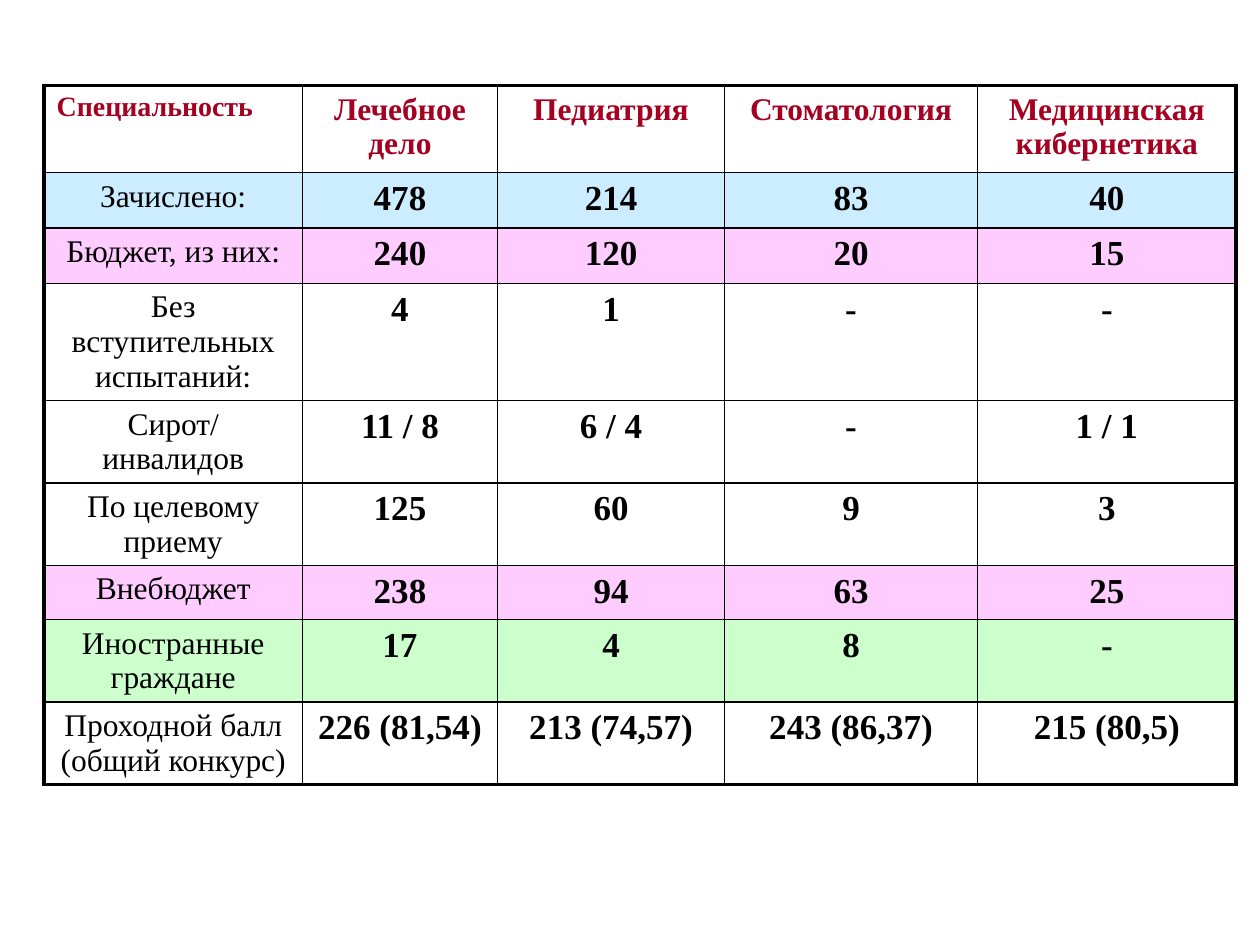
from lxml import etree
from pptx import Presentation
from pptx.dml.color import RGBColor
from pptx.enum.text import PP_ALIGN
from pptx.oxml.ns import qn
from pptx.util import Inches, Pt

LEFT, CENTER = PP_ALIGN.LEFT, PP_ALIGN.CENTER
BLACK = RGBColor(0x00, 0x00, 0x00)
CRIMSON = RGBColor(0xA5, 0x00, 0x21)
WHITE = RGBColor(0xFF, 0xFF, 0xFF)
BLUE = RGBColor(0xCC, 0xEC, 0xFF)
PINK = RGBColor(0xFF, 0xCC, 0xFF)
GREEN = RGBColor(0xCC, 0xFF, 0xCC)
FONT = "Times New Roman"
OUTER, INNER = 2.25, 1

COLUMN_WIDTHS = [2.05, 1.55, 1.8, 2.01, 2.05]
ROWS = [
    (0.69, None, ["Специальность", "Лечебное дело", "Педиатрия", "Стоматология", "Медицинская кибернетика"]),
    (0.44, BLUE, ["Зачислено:", "478", "214", "83", "40"]),
    (0.44, PINK, ["Бюджет, из них:", "240", "120", "20", "15"]),
    (0.44, None, ["Без вступительных испытаний:", "4", "1", "-", "-"]),
    (0.44, None, ["Сирот/ инвалидов", "11 / 8", "6 / 4", "-", "1 / 1"]),
    (0.44, None, ["По целевому приему", "125", "60", "9", "3"]),
    (0.43, PINK, ["Внебюджет", "238", "94", "63", "25"]),
    (0.43, GREEN, ["Иностранные граждане", "17", "4", "8", "-"]),
    (0.44, WHITE, ["Проходной балл (общий конкурс)", "226 (81,54)", "213 (74,57)", "243 (86,37)", "215 (80,5)"]),
]


def write_text(cell, text, size=18, bold=False, color=BLACK, align=CENTER):
    paragraph = cell.text_frame.paragraphs[0]
    paragraph.alignment = align
    run = paragraph.add_run()
    run.text = text
    run.font.name = FONT
    run.font.size = Pt(size)
    run.font.bold = bold
    run.font.color.rgb = color


def set_borders(cell, **widths):
    properties = cell._tc.get_or_add_tcPr()
    for side, width in widths.items():
        line = etree.SubElement(properties, qn(f"a:ln{side}"), w=str(Pt(width)))
        fill = etree.SubElement(line, qn("a:solidFill"))
        etree.SubElement(fill, qn("a:srgbClr"), val=str(BLACK))


def text_format(row, column):
    if row == 0:
        return dict(size=18 if column else 16, bold=True, color=CRIMSON,
                    align=CENTER if column else LEFT)
    return dict(size=20, bold=True) if column else {}


def build_table(slide):
    last_row, last_column = len(ROWS) - 1, len(COLUMN_WIDTHS) - 1
    frame = slide.shapes.add_table(
        len(ROWS), len(COLUMN_WIDTHS), Inches(0.35), Inches(0.68),
        Inches(sum(COLUMN_WIDTHS)), Inches(5.82))
    table = frame.table
    table.first_row = table.horz_banding = False
    for column, width in zip(table.columns, COLUMN_WIDTHS):
        column.width = Inches(width)
    for row, (height, color, texts) in enumerate(ROWS):
        table.rows[row].height = Inches(height)
        for column, text in enumerate(texts):
            cell = table.cell(row, column)
            write_text(cell, text, **text_format(row, column))
            set_borders(
                cell,
                L=OUTER if column == 0 else INNER,
                R=OUTER if column == last_column else INNER,
                T=OUTER if row == 0 else INNER,
                B=OUTER if row == last_row else INNER)
            if color is None:
                cell.fill.background()
            else:
                cell.fill.solid()
                cell.fill.fore_color.rgb = color
    frame.height = Inches(5.82)


def main():
    presentation = Presentation()
    presentation.slide_width = Inches(10)
    presentation.slide_height = Inches(7.5)
    build_table(presentation.slides.add_slide(presentation.slide_layouts[6]))
    presentation.save("out.pptx")


if __name__ == "__main__":
    main()
